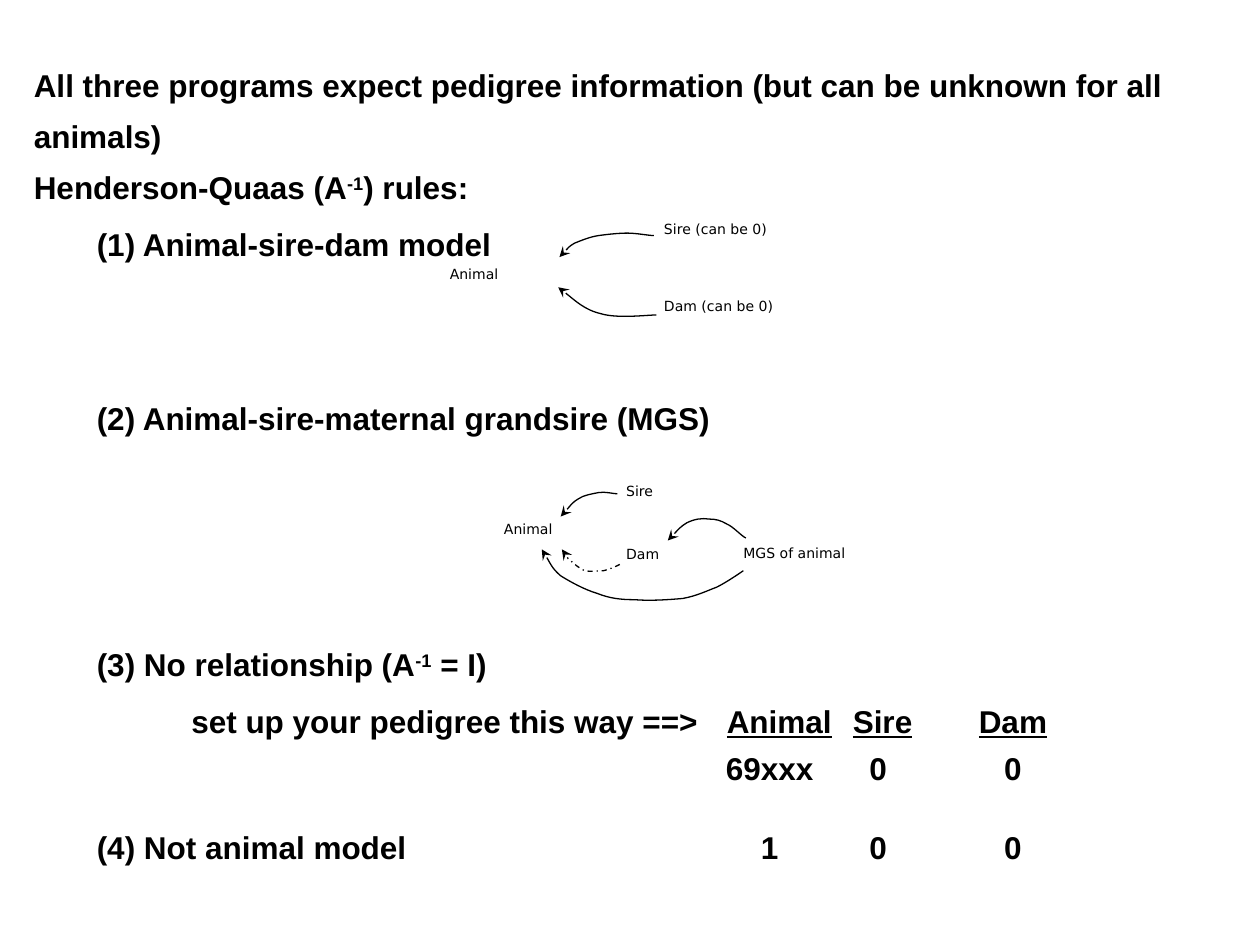
import lxml.etree
import pptx
import pptx.dml.color
import pptx.enum.dml
import pptx.enum.text
import pptx.oxml.ns
import pptx.util

BLACK = pptx.dml.color.RGBColor(0x00, 0x00, 0x00)
WHITE = pptx.dml.color.RGBColor(0xFF, 0xFF, 0xFF)
qn = pptx.oxml.ns.qn

deck = pptx.Presentation()
deck.slide_width = pptx.util.Inches(10)
deck.slide_height = pptx.util.Inches(7.5)
UNIT = deck.slide_width // 1000

page = deck.slides.add_slide(deck.slide_layouts[6])
page.background.fill.solid()
page.background.fill.fore_color.rgb = WHITE


def add_span(para, text, size=18, font="Arial", bold=True, underline=False, raised=False):
    span = para.add_run()
    span.text = text
    span.font.size = pptx.util.Pt(size)
    span.font.name = font
    span.font.bold = bold
    span.font.underline = underline
    span.font.color.rgb = BLACK
    if raised:
        span._r.get_or_add_rPr().set("baseline", "30000")


def add_box(shapes, left, top, width, height):
    box = shapes.add_textbox(left * UNIT, top * UNIT, width * UNIT, height * UNIT)
    box.text_frame.word_wrap = True
    return box.text_frame


PLAIN, RAISED, UNDERLINED = {}, {"raised": True}, {"underline": True}
HEADER_TABS = [(75, "l"), (500, "l"), (600, "l"), (700, "l")]
VALUE_TABS = [(534, "ctr"), (620, "ctr"), (727, "ctr")]

text_blocks = [
    ((17, 37, 980, 177), [
        (1.35, 0, [], [("All three programs expect pedigree information "
                        "(but can be unknown for all animals)", PLAIN)]),
        (1.35, 0, [], [("Henderson-Quaas (A", PLAIN), ("-1", RAISED), (") rules:", PLAIN)]),
        (1.5, 50, [], [("(1) Animal-sire-dam model", PLAIN)]),
    ]),
    ((67, 312, 550, 40), [
        (1.0, 0, [], [("(2) Animal-sire-maternal grandsire (MGS)", PLAIN)]),
    ]),
    ((67, 492, 833, 220), [
        (1.5, 0, [], [("(3) No relationship (A", PLAIN), ("-1", RAISED), (" = I)", PLAIN)]),
        (1.5, 0, HEADER_TABS, [("\tset up your pedigree this way ==>\t", PLAIN),
                               ("Animal", UNDERLINED), ("\t", PLAIN),
                               ("Sire", UNDERLINED), ("\t", PLAIN),
                               ("Dam", UNDERLINED)]),
        (1.25, 0, VALUE_TABS, [("\t69xxx\t0\t0", PLAIN)]),
        (2.1, 0, VALUE_TABS, [("(4) Not animal model\t1\t0\t0", PLAIN)]),
    ]),
]

for place, paragraphs in text_blocks:
    frame = add_box(page.shapes, *place)
    frame.auto_size = pptx.enum.text.MSO_AUTO_SIZE.SHAPE_TO_FIT_TEXT
    for number, (spacing, indent, tabs, spans) in enumerate(paragraphs):
        para = frame.add_paragraph() if number else frame.paragraphs[0]
        para.line_spacing = spacing
        properties = para._p.get_or_add_pPr()
        properties.set("marL", str(indent * UNIT))
        if tabs:
            tab_list = lxml.etree.SubElement(properties, qn("a:tabLst"))
            for position, alignment in tabs:
                lxml.etree.SubElement(tab_list, qn("a:tab"),
                                      pos=str(position * UNIT), algn=alignment)
        for text, style in spans:
            add_span(para, text, **style)

sire_dam_labels = [
    ("Animal", 357, 211, 60),
    ("Sire (can be 0)", 527, 175, 110),
    ("Dam (can be 0)", 527, 236, 110),
]
sire_dam_curves = [
    (False, [(519, 187), (515, 187), (505, 185), (498, 185), (491, 185), (482, 186),
             (475, 187), (468, 188), (461, 191), (456, 193), (451, 196), (446, 202),
             (444, 204)]),
    (False, [(521, 250), (514, 250), (490, 253), (477, 249), (464, 246), (450, 233),
             (443, 228)]),
]
grandsire_labels = [
    ("Animal", 400, 413, 60),
    ("Sire", 497, 383, 33),
    ("Dam", 497, 433, 33),
    ("MGS of animal", 590, 432, 90),
]
grandsire_curves = [
    (False, [(490, 392), (487, 392), (480, 390), (475, 391), (470, 392), (463, 393),
             (459, 396), (454, 399), (448, 407), (445, 410)]),
    (False, [(590, 453), (587, 455), (577, 462), (569, 466), (561, 469), (553, 473),
             (542, 475), (531, 476), (516, 477), (504, 476), (493, 476), (484, 475),
             (474, 471), (464, 468), (453, 462), (445, 457), (438, 451), (433, 440),
             (430, 436)]),
    (False, [(592, 427), (589, 426), (582, 418), (577, 416), (572, 413), (568, 412),
             (563, 412), (557, 411), (551, 412), (545, 415), (540, 418), (533, 426),
             (530, 429)]),
    (True, [(492, 448), (490, 449), (484, 452), (479, 453), (474, 453), (469, 454),
            (464, 453), (460, 451), (456, 448), (453, 445), (450, 443), (448, 438),
            (446, 436)]),
]

grandsire_group = page.shapes.add_group_shape()
diagrams = [
    (grandsire_group.shapes, grandsire_labels, grandsire_curves),
    (page.shapes, sire_dam_labels, sire_dam_curves),
]

for shapes, labels, curves in diagrams:
    for text, left, top, width in labels:
        frame = add_box(shapes, left, top, width, 20)
        frame.margin_left = frame.margin_right = 0
        frame.margin_top = frame.margin_bottom = 0
        add_span(frame.paragraphs[0], text, size=8, font="DejaVu Sans", bold=False)

    for dashed, points in curves:
        builder = shapes.build_freeform(*points[0], scale=UNIT)
        builder.add_line_segments(points[1:], close=False)
        arrow = builder.convert_to_shape()
        arrow.shadow.inherit = False
        arrow.fill.background()
        arrow.line.color.rgb = BLACK
        arrow.line.width = pptx.util.Pt(0.75)
        if dashed:
            arrow.line.dash_style = pptx.enum.dml.MSO_LINE.DASH_DOT
        lxml.etree.SubElement(arrow.line._get_or_add_ln(), qn("a:tailEnd"), type="stealth")

        outline = next(arrow._element.iter(qn("a:path")))
        segments = outline.findall(qn("a:lnTo"))
        for first in range(0, len(segments), 3):
            curve = lxml.etree.SubElement(outline, qn("a:cubicBezTo"))
            for segment in segments[first:first + 3]:
                curve.append(segment[0])
                outline.remove(segment)

deck.save("out.pptx")
